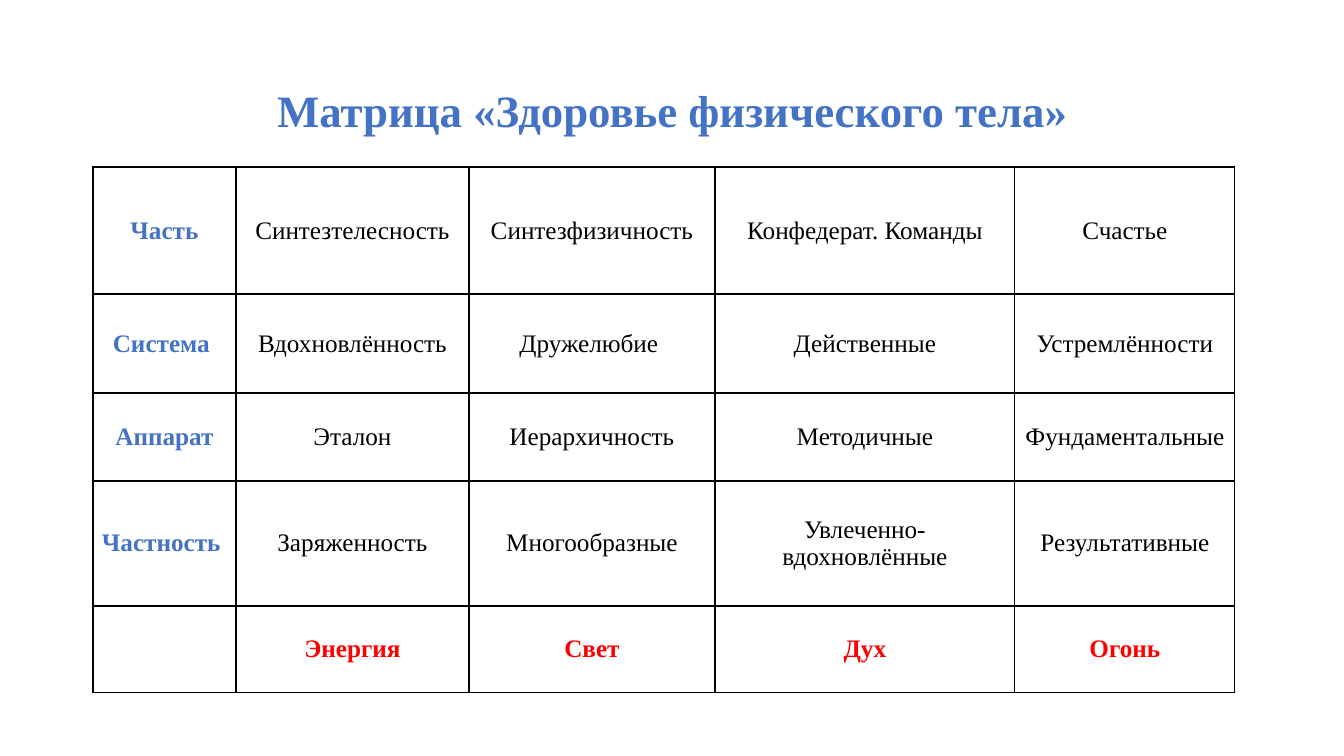
from lxml import etree
from pptx import Presentation
from pptx import util as u
from pptx.dml import color
from pptx.enum import text
from pptx.oxml import ns

TITLE = "Матрица «Здоровье физического тела»"
ROWS = [
    ["Часть", "Синтезтелесность", "Синтезфизичность", "Конфедерат. Команды", "Счастье"],
    ["Система ", "Вдохновлённость", "Дружелюбие ", "Действенные", "Устремлённости"],
    ["Аппарат", "Эталон", "Иерархичность", "Методичные", "Фундаментальные"],
    ["Частность ", "Заряженность", "Многообразные", "Увлеченно-вдохновлённые", "Результативные"],
    ["", "Энергия", "Свет", "Дух", "Огонь"],
]
WIDTHS = [143, 233, 246, 300, 220]
HEIGHTS = [127, 99, 88, 125, 87]
SLIDE = (1344, 756)
HEAD = (93, 40, 1159, 146)
GRID = (93, 167, sum(WIDTHS), sum(HEIGHTS))
THEME = {
    "font": "Times New Roman",
    "blue": "4472C4",
    "black": "000000",
    "red": "FF0000",
    "title": 32,
    "cell": 18,
    "line": 1,
    "gap": 6,
}


def px(n):
    return u.Emu(round(n * 914400 / 100.8))


def style(para, size, tint, bold):
    para.alignment = text.PP_ALIGN.CENTER
    for run in para.runs:
        font = run.font
        font.name = THEME["font"]
        font.size = u.Pt(THEME[size])
        font.bold = bold
        font.color.rgb = color.RGBColor.from_string(THEME[tint])


def border(cell):
    props = cell._tc.get_or_add_tcPr()
    for side in ("lnL", "lnR", "lnT", "lnB"):
        line = etree.SubElement(props, ns.qn("a:" + side), w=str(u.Pt(THEME["line"])))
        fill = etree.SubElement(line, ns.qn("a:solidFill"))
        etree.SubElement(fill, ns.qn("a:srgbClr"), val=THEME["black"])


def add_title(slide):
    frame = slide.shapes.add_textbox(*map(px, HEAD)).text_frame
    frame.word_wrap = True
    frame.vertical_anchor = text.MSO_ANCHOR.MIDDLE
    frame.text = TITLE
    para = frame.paragraphs[0]
    para.line_spacing = 0.9
    style(para, "title", "blue", True)


def fill_cell(cell, word, row, col):
    cell.margin_left = cell.margin_right = px(7)
    cell.margin_top = cell.margin_bottom = 0
    cell.vertical_anchor = text.MSO_ANCHOR.MIDDLE
    border(cell)
    cell.fill.background()
    if not word:
        return
    cell.text_frame.text = word
    para = cell.text_frame.paragraphs[0]
    para.space_after = u.Pt(THEME["gap"])
    tint = "blue" if col == 0 else "red" if row == len(ROWS) - 1 else "black"
    style(para, "cell", tint, tint != "black")


def add_grid(slide):
    table = slide.shapes.add_table(len(ROWS), len(WIDTHS), *map(px, GRID)).table
    table.first_row = table.horz_banding = False
    for col, wide in zip(table.columns, WIDTHS):
        col.width = px(wide)
    for row, high in zip(table.rows, HEIGHTS):
        row.height = px(high)
    for r, words in enumerate(ROWS):
        for c, word in enumerate(words):
            fill_cell(table.cell(r, c), word, r, c)


def main():
    deck = Presentation()
    deck.slide_width, deck.slide_height = map(px, SLIDE)
    slide = deck.slides.add_slide(deck.slide_layouts[6])
    add_title(slide)
    add_grid(slide)
    deck.save("out.pptx")


if __name__ == "__main__":
    main()
